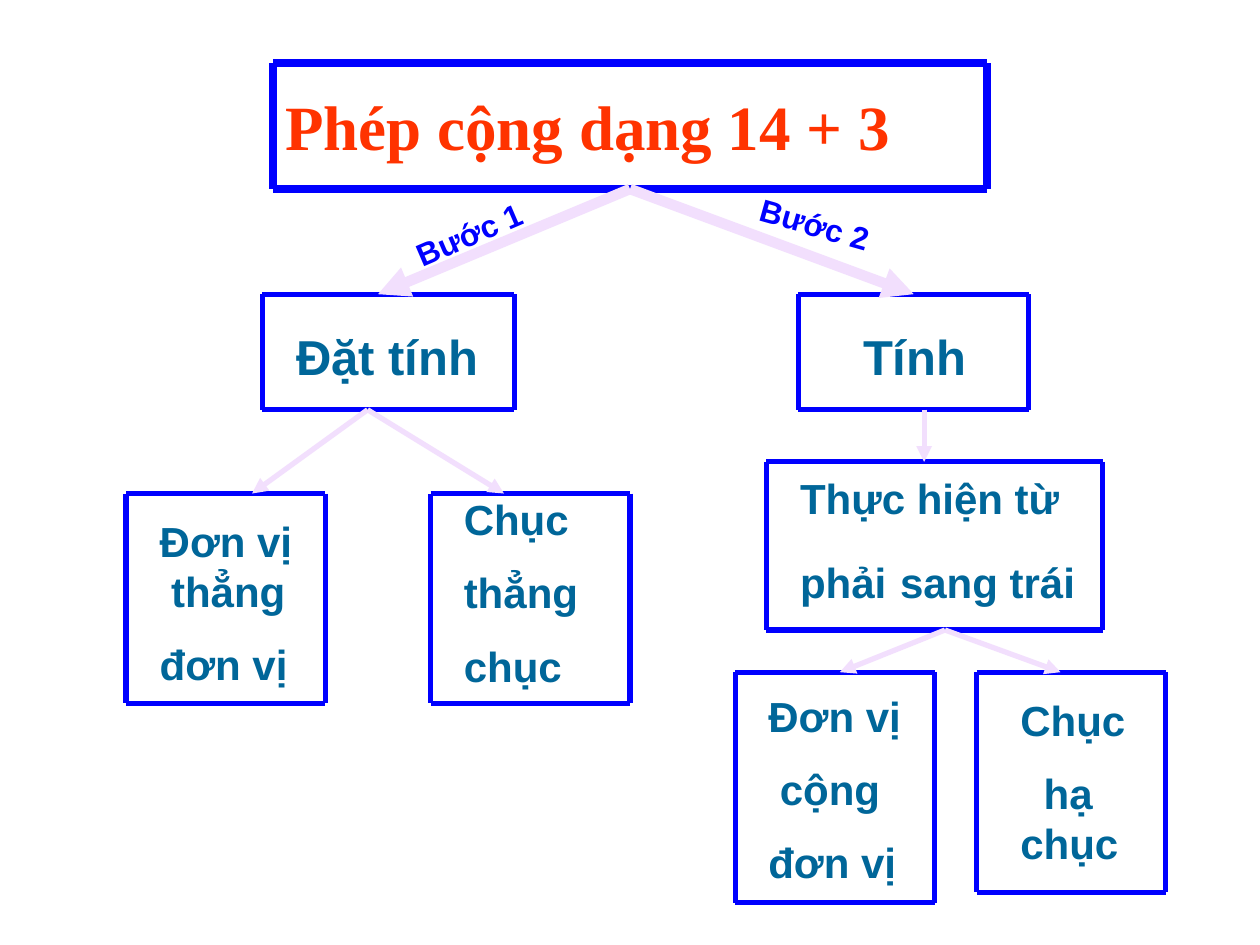
"""Build a slide showing the two steps of adding 14 + 3 as a tree of boxes."""
import pptx
import pptx.dml.color
import pptx.enum.shapes
import pptx.enum.text
import pptx.oxml.ns
import pptx.util
from lxml import etree

Cm = pptx.util.Cm
Pt = pptx.util.Pt
COLORS = {"frame": "0000FF", "text": "006699", "title": "FF3300", "arrow": "F2DFFD"}

deck = pptx.Presentation()
deck.slide_width, deck.slide_height = Cm(25.4), Cm(19.05)
page = deck.slides.add_slide(deck.slide_layouts[6])


def add_text(left, top, width, height, lines, size, color="text", font="Arial", angle=0):
    box = page.shapes.add_textbox(Cm(left), Cm(top), Cm(width), Cm(height))
    box.rotation = angle
    frame = box.text_frame
    frame.word_wrap = True
    frame.auto_size = pptx.enum.text.MSO_AUTO_SIZE.SHAPE_TO_FIT_TEXT
    for number, (pieces, margin, indent) in enumerate(lines):
        para = frame.paragraphs[0] if number == 0 else frame.add_paragraph()
        properties = para._p.get_or_add_pPr()
        properties.set("marL", str(Cm(margin)))
        properties.set("indent", str(Cm(indent)))
        if number:
            para.space_before = Pt(15 if len(pieces) > 1 else 13)
        for piece in pieces:
            span = para.add_run()
            span.text = piece
            span.font.name = font
            span.font.size = Pt(28 if piece == " " else size)
            span.font.bold = True
            span.font.color.rgb = pptx.dml.color.RGBColor.from_string(COLORS[color])


def add_line(start_x, start_y, end_x, end_y, color, width):
    line = page.shapes.add_connector(
        pptx.enum.shapes.MSO_CONNECTOR.STRAIGHT, Cm(start_x), Cm(start_y), Cm(end_x), Cm(end_y)
    )
    line.line.color.rgb = pptx.dml.color.RGBColor.from_string(COLORS[color])
    line.line.width = Pt(width)
    etree.SubElement(line._element.spPr, pptx.oxml.ns.qn("a:effectLst"))
    return line


step_texts = [
    (5.72, 6.45, 4.88, 1.45, "Đặt tính"),
    (17.15, 6.45, 2.97, 1.45, "Tính"),
]
for *place, wording in step_texts:
    add_text(*place, [([wording], 0, 0)], 28)

detail_texts = [
    (2.97, 10.26, 3.81, 3.81, [(["Đơn vị thẳng"], 0.23, -0.23), (["đơn vị"], 0, 0)]),
    (9.1, 9.83, 5.08, 4.32, [(["Chục"], 0, 0), (["thẳng"], 0, 0), (["chục"], 0, 0)]),
    (15.88, 9.41, 6.99, 3.05, [(["Thực hiện từ"], 0, 0), (["phải", " ", "sang trái"], 0, 0)]),
    (15.24, 13.79, 3.38, 4.32, [(["Đơn vị"], 0, 0), (["cộng"], 0, 0.23), (["đơn vị"], 0, 0)]),
    (20.32, 13.87, 3.61, 3.81, [(["Chục"], 0, 0), (["hạ chục"], 0, 0.47)]),
]
for *place, lines in detail_texts:
    add_text(*place, lines, 24)

add_text(5.5, 1.63, 14.81, 4.06, [(["Phép cộng dạng 14 + 3"], 0, 0)], 36, "title", "Times New Roman")

frames = [
    (5.5, 1.27, 19.9, 3.81, 4.5),
    (5.29, 5.93, 10.37, 8.26, 3),
    (16.09, 5.93, 20.74, 8.26, 3),
    (2.54, 9.95, 6.56, 14.18, 3),
    (8.68, 9.95, 12.7, 14.18, 3),
    (15.45, 9.31, 22.23, 12.7, 3),
    (14.82, 13.55, 18.84, 18.2, 3),
    (19.69, 13.55, 23.5, 17.99, 3),
]
for left, top, right, bottom, width in frames:
    for x in (left, right):
        add_line(x, top, x, bottom, "frame", width)
    for y in (top, bottom):
        add_line(left, y, right, y, "frame", width)

arrows = [
    (12.7, 3.81, 7.62, 5.93, 6),
    (12.7, 3.81, 18.42, 5.93, 6),
    (7.41, 8.26, 5.08, 9.95, 3),
    (7.41, 8.26, 10.16, 9.95, 3),
    (19.05, 12.7, 21.38, 13.55, 3),
    (19.05, 12.7, 16.93, 13.55, 3),
    (18.63, 8.26, 18.63, 9.31, 3),
]
for *ends, width in arrows:
    arrow = add_line(*ends, "arrow", width)
    outline = arrow.line._get_or_add_ln()
    etree.SubElement(outline, pptx.oxml.ns.qn("a:tailEnd"), type="triangle")

for left, angle, wording in [(8.05, -23.3, "Bước 1"), (15.04, 15.7, "Bước 2")]:
    add_text(left, 4.09, 3.38, 1.02, [([wording], 0, 0)], 18, "frame", angle=angle)

deck.save("out.pptx")
